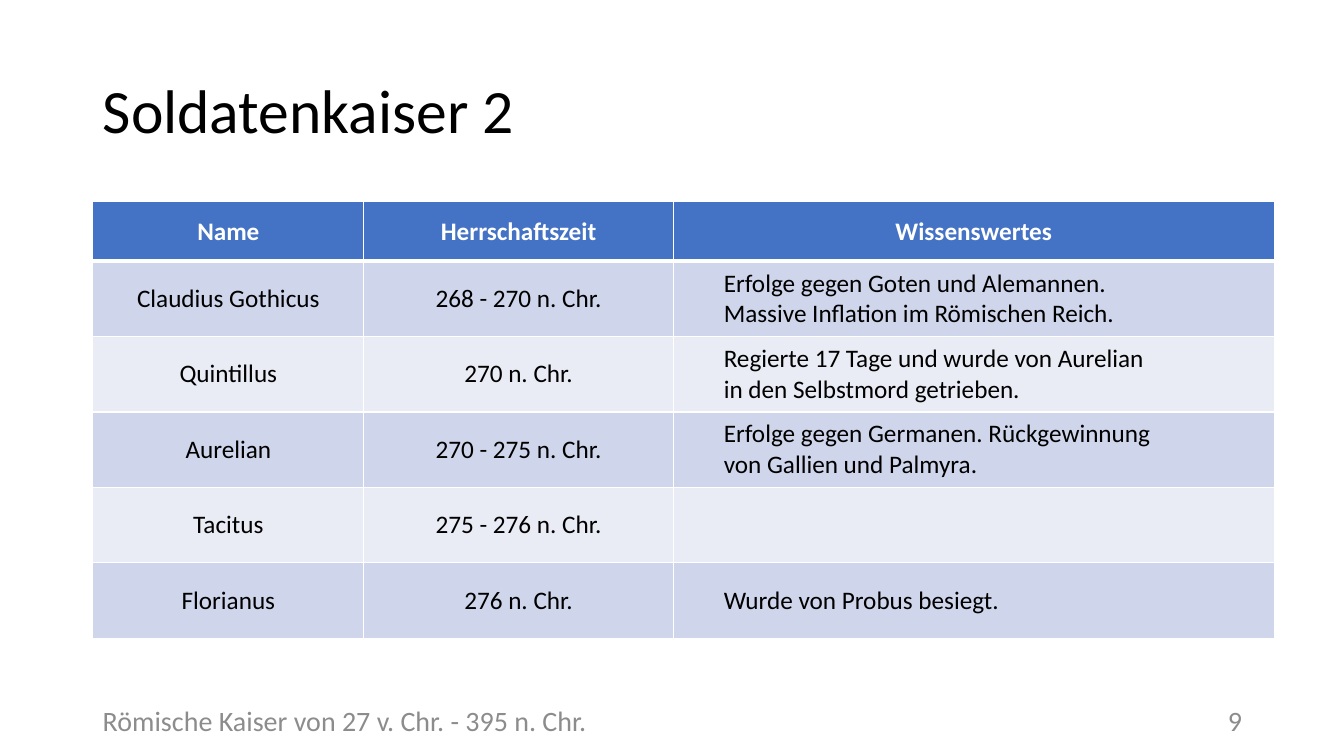
from lxml import etree
from pptx import Presentation
from pptx.dml.color import RGBColor
from pptx.enum.text import MSO_ANCHOR, PP_ALIGN
from pptx.oxml.ns import qn
from pptx.util import Cm, Pt

LEFT, CENTER, RIGHT = PP_ALIGN.LEFT, PP_ALIGN.CENTER, PP_ALIGN.RIGHT
MIDDLE = MSO_ANCHOR.MIDDLE

BLACK = RGBColor(0x00, 0x00, 0x00)
WHITE = RGBColor(0xFF, 0xFF, 0xFF)
GREY = RGBColor(0x8C, 0x8C, 0x8C)
HEADER_BLUE = RGBColor(0x44, 0x72, 0xC4)
BANDS = [RGBColor(0xCF, 0xD5, 0xEA), RGBColor(0xE9, 0xEB, 0xF5)]

TITLE = "Soldatenkaiser 2"
FOOTER = "Römische Kaiser von 27 v. Chr. - 395 n. Chr."
PAGE = "9"
# \v is a line break inside a paragraph
ROWS = [
    ("Name", "Herrschaftszeit", "Wissenswertes"),
    ("Claudius Gothicus", "268 - 270 n. Chr.",
     "Erfolge gegen Goten und Alemannen.\vMassive Inflation im Römischen Reich."),
    ("Quintillus", "270 n. Chr.",
     "Regierte 17 Tage und wurde von Aurelian\vin den Selbstmord getrieben."),
    ("Aurelian", "270 - 275 n. Chr.",
     "Erfolge gegen Germanen. Rückgewinnung\vvon Gallien und Palmyra."),
    ("Tacitus", "275 - 276 n. Chr.", ""),
    ("Florianus", "276 n. Chr.", "Wurde von Probus besiegt."),
]

MARGIN_X = Cm(2.34)
TABLE_TOP = Cm(5.08)
COL_WIDTHS = [Cm(6.83), Cm(7.8), Cm(15.14)]
ROW_HEIGHTS = [Cm(1.5)] + [Cm(1.9)] * (len(ROWS) - 1)
FOOTER_TOP, FOOTER_HEIGHT = Cm(17.65), Cm(1.02)
NOTE_INDENT = Cm(1.27)

TITLE_FONT = {"name": "Calibri", "size": Pt(44)}
FOOTER_FONT = {"name": "Calibri", "size": Pt(20)}
HEADER_FONT = {"name": "Calibri", "size": Pt(18), "bold": True}
BODY_FONT = {"name": "Calibri", "size": Pt(18), "bold": False}


def write(p, text, font, color, align):
    p.text = text
    p.alignment = align
    for r in p.runs:
        for key, value in font.items():
            setattr(r.font, key, value)
        r.font.color.rgb = color


def add_text(slide, box, text, font, color, align=LEFT):
    tf = slide.shapes.add_textbox(*box).text_frame
    tf.word_wrap = True
    tf.vertical_anchor = MIDDLE
    p = tf.paragraphs[0]
    write(p, text, font, color, align)
    return p


def add_borders(cell, bottom):
    tc_pr = cell._tc.get_or_add_tcPr()
    for side, width in (("L", 1), ("R", 1), ("T", 1), ("B", bottom)):
        ln = etree.SubElement(tc_pr, qn(f"a:ln{side}"), w=str(Pt(width)))
        fill = etree.SubElement(ln, qn("a:solidFill"))
        etree.SubElement(fill, qn("a:srgbClr"), val=str(WHITE))


def fill_cell(cell, text, row, col):
    header = row == 0
    note = col == 2 and not header
    add_borders(cell, 3 if header else 1)
    cell.fill.solid()
    cell.fill.fore_color.rgb = HEADER_BLUE if header else BANDS[(row - 1) % 2]
    cell.vertical_anchor = MIDDLE
    for side in ("left", "top", "right", "bottom"):
        setattr(cell, f"margin_{side}", 0)
    p = cell.text_frame.paragraphs[0]
    write(p, text, HEADER_FONT if header else BODY_FONT,
          WHITE if header else BLACK, LEFT if note else CENTER)
    if note:
        p.level = 1
        p._p.get_or_add_pPr().set("marL", str(NOTE_INDENT))


def add_emperor_table(slide):
    frame = slide.shapes.add_table(len(ROWS), len(COL_WIDTHS), MARGIN_X, TABLE_TOP,
                                   sum(COL_WIDTHS), sum(ROW_HEIGHTS))
    table = frame.table
    for column, width in zip(table.columns, COL_WIDTHS):
        column.width = width
    for row, height in zip(table.rows, ROW_HEIGHTS):
        row.height = height
    for i, texts in enumerate(ROWS):
        for j, text in enumerate(texts):
            fill_cell(table.cell(i, j), text, i, j)


def main():
    prs = Presentation()
    prs.slide_width, prs.slide_height = Cm(33.87), Cm(19.05)
    slide = prs.slides.add_slide(prs.slide_layouts[6])
    title = add_text(slide, (MARGIN_X, Cm(1.02), Cm(29.21), Cm(3.68)),
                     TITLE, TITLE_FONT, BLACK)
    title.line_spacing = 0.9
    add_emperor_table(slide)
    add_text(slide, (Cm(23.93), FOOTER_TOP, Cm(7.62), FOOTER_HEIGHT),
             PAGE, FOOTER_FONT, GREY, RIGHT)
    add_text(slide, (MARGIN_X, FOOTER_TOP, Cm(20.32), FOOTER_HEIGHT),
             FOOTER, FOOTER_FONT, GREY)
    prs.save("out.pptx")


if __name__ == "__main__":
    main()
